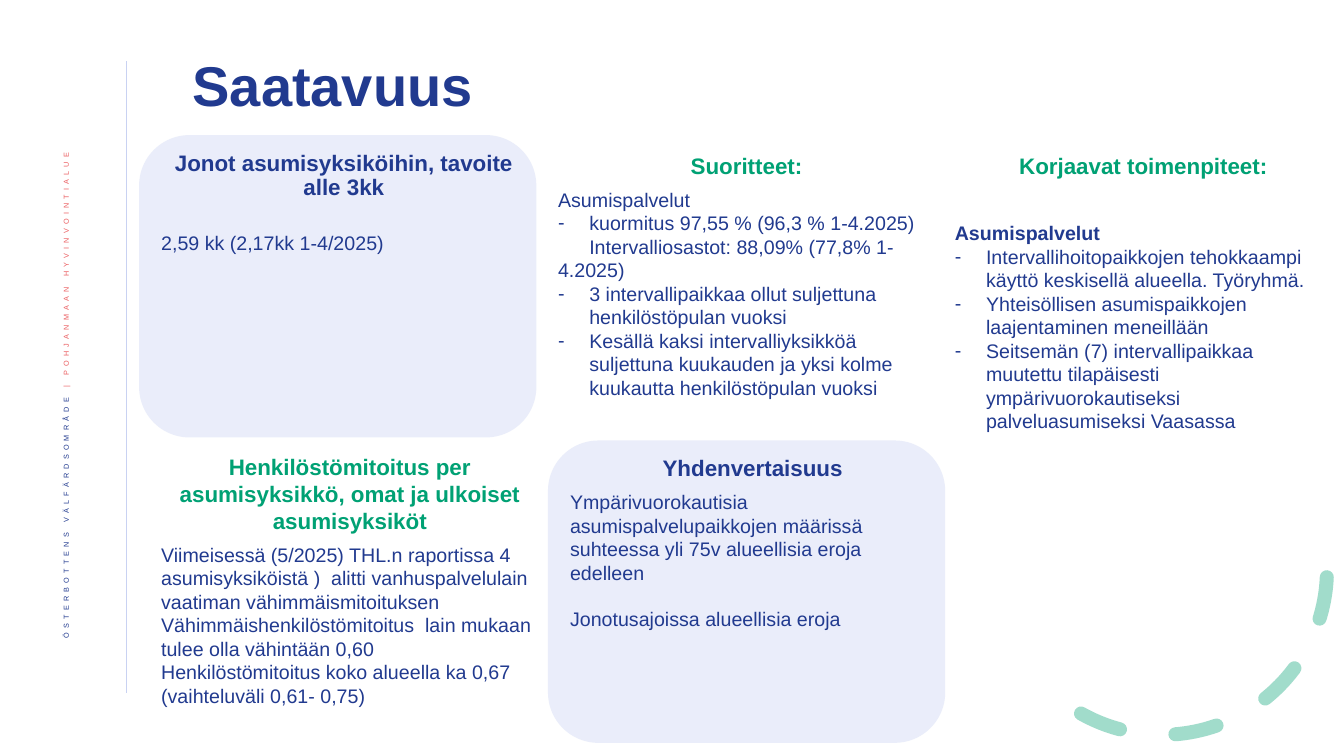
from lxml import etree
from pptx import Presentation
from pptx.dml.color import RGBColor
from pptx.enum import dml, shapes, text
from pptx.oxml import ns
from pptx.util import Inches, Pt

COLORS = {"navy": "213A8F", "green": "00A174", "coral": "EB5C5F", "pale": "C9D2F2"}
FONT = "Arial"
LEFT, STEP, COL_W = 1.5, 3.935, 3.94
CARD_H, INSET = 3, 0.12
HANG = 0.31


def rgb(name):
    """Return the named colour."""
    return RGBColor.from_string(COLORS[name])


def sub(parent, tag, **attrs):
    """Append a drawing element to its parent."""
    return etree.SubElement(parent, ns.qn(tag), attrs)


def add_run(p, words, size, color="navy", bold=False):
    """Add one formatted run."""
    r = p.add_run()
    r.text = words
    r.font.name, r.font.size, r.font.bold = FONT, Pt(size), bold
    r.font.color.rgb = rgb(color)
    return r


def set_alpha(fill, percent):
    """Make a solid fill partly transparent."""
    clr = fill._xPr.find(ns.qn("a:solidFill"))[0]
    sub(clr, "a:alpha", val=str(percent * 1000))


def place(sp, box):
    """Move a shape to its box."""
    sp.left, sp.top, sp.width, sp.height = (Inches(v) for v in box)


def format_paragraph(p, kind="plain", before=0, after=0, spacing=1.0):
    """Set the bullet, indents and spacing of a paragraph."""
    pPr = p._p.get_or_add_pPr()
    margin, indent = {"plain": (0, 0), "first": (0, HANG), "bullet": (HANG, -HANG)}[kind]
    pPr.set("marL", str(Inches(margin)))
    pPr.set("indent", str(Inches(indent)))
    if kind == "bullet":
        sub(pPr, "a:buChar", char="-")
    else:
        sub(pPr, "a:buNone")
    p.space_before, p.space_after, p.line_spacing = Pt(before), Pt(after), spacing
    p.alignment = text.PP_ALIGN.LEFT


def fill_panel(sp, box, heading, items, color, spacing=1.0):
    """Place a text shape and write its heading and paragraphs."""
    place(sp, box)
    tf = sp.text_frame
    tf.word_wrap = True
    tf.auto_size = text.MSO_AUTO_SIZE.NONE
    tf.vertical_anchor = text.MSO_ANCHOR.TOP
    p = tf.paragraphs[0]
    format_paragraph(p, after=6, spacing=spacing)
    p.alignment = text.PP_ALIGN.CENTER
    add_run(p, heading, 16, color, True)
    for words, kind, before, bold in items:
        p = tf.add_paragraph()
        format_paragraph(p, kind, before)
        add_run(p, words, 14, bold=bold)


def add_textbox(s):
    """Add an empty text box."""
    return s.shapes.add_textbox(0, 0, 0, 0)


def add_card(s, x, y, heading, items):
    """Draw a pale rounded card with its text inside."""
    sp = s.shapes.add_shape(shapes.MSO_SHAPE.ROUNDED_RECTANGLE, 0, 0, 0, 0)
    place(sp, (x, y, COL_W, CARD_H))
    sp.shadow.inherit = False
    sp.fill.solid()
    sp.fill.fore_color.rgb = rgb("pale")
    set_alpha(sp.fill, 38)
    sp.line.fill.background()
    box = (x + INSET, y + INSET, COL_W - INSET, CARD_H - 2 * INSET)
    fill_panel(add_textbox(s), box, heading, items, "navy", 0.9)


def add_margin(s, x, y, h):
    """Draw the side rule and the vertical organisation name."""
    line = s.shapes.add_connector(shapes.MSO_CONNECTOR.STRAIGHT, Inches(x), Inches(y),
                                  Inches(x), Inches(y + h))
    line.line.color.rgb = rgb("pale")
    line.line.width = Pt(0.5)
    sub(line._element.spPr, "a:effectLst")
    sp = add_textbox(s)
    place(sp, (x - 0.83, y + 0.81, 0.52, 5.73))
    tf = sp.text_frame
    tf.word_wrap = True
    tf.vertical_anchor = text.MSO_ANCHOR.MIDDLE
    tf._txBody.bodyPr.set("vert", "vert270")
    p = tf.paragraphs[0]
    p.alignment, p.line_spacing = text.PP_ALIGN.RIGHT, 0.9
    for words, color in (("ÖSTERBOTTENS VÄLFÄRDSOMRÅDE ", "navy"),
                         ("| POHJANMAAN HYVINVOINTIALUE", "coral")):
        rPr = add_run(p, words, 9, color)._r.get_or_add_rPr()
        rPr.set("baseline", "30000")
        rPr.set("spc", "300")


def add_arc(s, box):
    """Draw the dashed corner arc."""
    sp = s.shapes.add_shape(shapes.MSO_SHAPE.ARC, 0, 0, 0, 0)
    place(sp, box)
    sp.shadow.inherit = False
    sp.rotation = 98.9
    sp.adjustments[0], sp.adjustments[1] = 158.17, 17.81
    sp.fill.background()
    sp.line.color.rgb = rgb("green")
    sp.line.width = Pt(10)
    sp.line.dash_style = dml.MSO_LINE.DASH
    set_alpha(sp.line.fill, 36)
    sp.line._ln.set("cap", "rnd")


def add_title(s, box, words):
    """Write the slide title."""
    sp = s.shapes.title
    place(sp, box)
    tf = sp.text_frame
    tf.auto_size = text.MSO_AUTO_SIZE.NONE
    tf.vertical_anchor = text.MSO_ANCHOR.MIDDLE
    p = tf.paragraphs[0]
    p.alignment, p.line_spacing = text.PP_ALIGN.LEFT, 0.9
    add_run(p, words, 40, bold=True)


def build_availability(prs):
    """Build the availability slide."""
    s = prs.slides.add_slide(prs.slide_layouts[3])
    add_margin(s, 1.25, 0.61, 6.27)
    add_arc(s, (9.89, 4.02, 3.27, 3.27))
    add_title(s, (1.81, 0.45, 10.2, 0.85), "Saatavuus")
    x1, x2, x3 = (LEFT + STEP * i for i in range(3))
    add_card(s, x1 - INSET, 1.34, "Jonot asumisyksiköihin, tavoite alle 3kk", [
        ("2,59 kk (2,17kk 1-4/2025)", "plain", 16, False)])
    fill_panel(s.placeholders[1], (x2, 1.46, COL_W, 2.57), "Suoritteet:", [
        ("Asumispalvelut", "plain", 0, False),
        ("kuormitus 97,55 % (96,3 % 1-4.2025)", "bullet", 0, False),
        ("Intervalliosastot: 88,09% (77,8% 1-4.2025)", "first", 0, False),
        ("3 intervallipaikkaa ollut suljettuna henkilöstöpulan vuoksi", "bullet", 0, False),
        ("Kesällä kaksi intervalliyksikköä suljettuna kuukauden ja yksi kolme kuukautta "
         "henkilöstöpulan vuoksi", "bullet", 0, False)], "green")
    fill_panel(s.placeholders[2], (x3, 1.46, COL_W, 3.64), "Korjaavat toimenpiteet:", [
        ("Asumispalvelut", "plain", 24, True),
        ("Intervallihoitopaikkojen tehokkaampi käyttö keskisellä alueella. Työryhmä.",
         "bullet", 0, False),
        ("Yhteisöllisen asumispaikkojen laajentaminen meneillään", "bullet", 0, False),
        ("Seitsemän (7) intervallipaikkaa muutettu tilapäisesti ympärivuorokautiseksi "
         "palveluasumiseksi Vaasassa", "bullet", 0, False)], "green")
    add_card(s, x2, 4.37, "Yhdenvertaisuus", [
        ("Ympärivuorokautisia asumispalvelupaikkojen määrissä suhteessa yli 75v "
         "alueellisia eroja edelleen", "plain", 0, False),
        ("Jonotusajoissa alueellisia eroja", "plain", 16, False)])
    fill_panel(add_textbox(s), (x1, 4.45, COL_W, 2.64),
               "Henkilöstömitoitus per asumisyksikkö, omat ja ulkoiset asumisyksiköt", [
        ("Viimeisessä (5/2025) THL.n raportissa 4 asumisyksiköistä )  alitti "
         "vanhuspalvelulain vaatiman vähimmäismitoituksen", "plain", 0, False),
        ("Vähimmäishenkilöstömitoitus  lain mukaan tulee olla vähintään 0,60",
         "plain", 0, False),
        ("Henkilöstömitoitus koko alueella ka 0,67 (vaihteluväli 0,61- 0,75)",
         "plain", 0, False)], "green")


def main():
    """Create and save the presentation."""
    prs = Presentation()
    prs.slide_width, prs.slide_height = Inches(13.33), Inches(7.5)
    build_availability(prs)
    prs.save("out.pptx")


if __name__ == "__main__":
    main()
